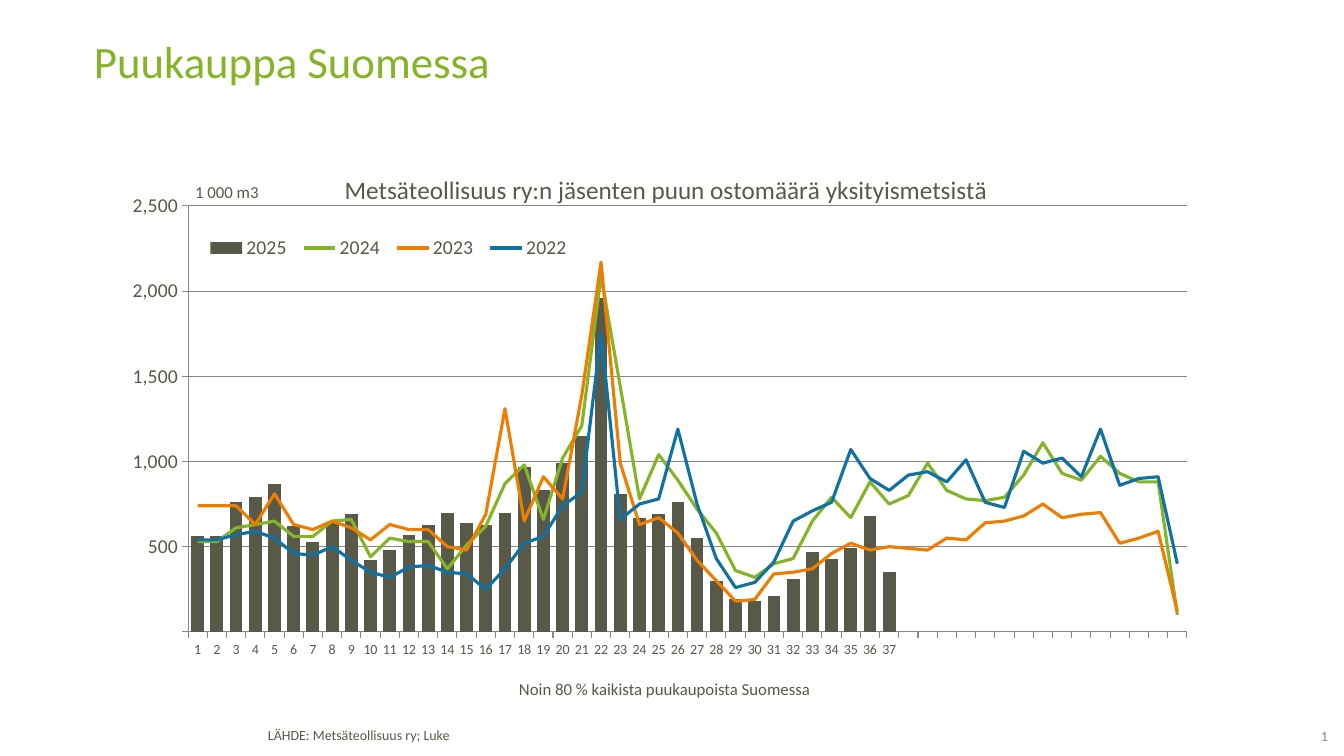
from dataclasses import dataclass

from lxml import etree
from pptx import Presentation, util as u
from pptx.chart.data import CategoryChartData
from pptx.dml.color import RGBColor
from pptx.enum import chart as ch, text
from pptx.oxml.ns import qn

PX = 914400 / 100.8
FONT = "Calibri"
GREEN = RGBColor(0x85, 0xB5, 0x26)
ORANGE = RGBColor(0xEF, 0x7D, 0x00)
BLUE = RGBColor(0x0F, 0x72, 0xA2)
DARK = RGBColor(0x59, 0x59, 0x4A)
GREY = RGBColor(0x87, 0x87, 0x87)
WEEKS = 52
WIDE, HIGH = 1178, 520


@dataclass
class Label:
    words: str
    left: int
    top: int
    width: int
    height: int
    size: int
    color: RGBColor = DARK
    space: float = 1.0
    align: text.PP_ALIGN = text.PP_ALIGN.LEFT
    inset: int = 10


@dataclass
class Year:
    name: str
    color: RGBColor
    loads: list[int]


LABELS = [
    Label("LÄHDE: Metsäteollisuus ry; Luke", 258, 724, 724, 27, 10, space=0.85),
    Label("1", 1275, 728, 53, 19, 10, GREY, align=text.PP_ALIGN.RIGHT, inset=0),
    Label("Puukauppa Suomessa", 84, 39, 1178, 99, 32, GREEN, space=0.8),
    Label("Noin 80 % kaikista puukaupoista Suomessa", 509, 674, 331, 31, 12),
]

YEARS = [
    Year("2025", DARK, [
        56, 56, 76, 79, 87, 62, 53, 64, 69, 42, 48, 57, 63, 70, 64, 63, 70, 97,
        83, 99, 115, 196, 81, 67, 69, 76, 55, 30, 19, 18, 21, 31, 47, 43, 49,
        68, 35]),
    Year("2024", GREEN, [
        53, 53, 61, 63, 65, 56, 56, 65, 66, 44, 55, 53, 53, 37, 51, 62, 87, 98,
        66, 102, 121, 209, 144, 78, 104, 89, 72, 58, 36, 32, 40, 43, 65, 79, 67,
        88, 75, 80, 99, 83, 78, 77, 79, 92, 111, 93, 89, 103, 93, 88, 88, 10]),
    Year("2023", ORANGE, [
        74, 74, 74, 63, 81, 63, 60, 65, 61, 54, 63, 60, 60, 50, 48, 69, 131, 65,
        91, 78, 139, 217, 99, 63, 67, 58, 42, 30, 18, 19, 34, 35, 37, 46, 52,
        48, 50, 49, 48, 55, 54, 64, 65, 68, 75, 67, 69, 70, 52, 55, 59, 12]),
    Year("2022", BLUE, [
        54, 54, 57, 59, 55, 46, 45, 50, 42, 35, 32, 38, 39, 35, 34, 25, 37, 52,
        56, 74, 82, 175, 66, 75, 78, 119, 75, 43, 26, 29, 41, 65, 71, 76, 107,
        90, 83, 92, 94, 88, 101, 76, 73, 106, 99, 102, 91, 119, 86, 90, 91, 40]),
]


def px(count: int) -> int:
    return round(count * PX)


def style(font, size: int, color: RGBColor = DARK) -> None:
    font.name, font.size, font.bold = FONT, u.Pt(size), False
    font.color.rgb = color


def write(slide, label: Label) -> None:
    box = slide.shapes.add_textbox(
        px(label.left), px(label.top), px(label.width), px(label.height))
    frame = box.text_frame
    frame.word_wrap = True
    frame.margin_left = frame.margin_right = px(label.inset)
    frame.margin_top = frame.margin_bottom = px(label.inset // 2)
    line = frame.paragraphs[0]
    line.text = label.words
    line.alignment, line.line_spacing = label.align, label.space
    style(line.font, label.size, label.color)


def add(parent, tag: str, val: str):
    return etree.SubElement(parent, qn(f"c:{tag}"), val=val)


def place(parent, index: int, inner: bool = False, **sides: int) -> None:
    for old in parent.findall(qn("c:layout")):
        parent.remove(old)
    layout = parent.makeelement(qn("c:layout"))
    parent.insert(index, layout)
    manual = etree.SubElement(layout, qn("c:manualLayout"))
    if inner:
        add(manual, "layoutTarget", "inner")
    for side in "xy":
        add(manual, f"{side}Mode", "edge")
    for side, count in sides.items():
        add(manual, side, str(count / (WIDE if side in "xw" else HIGH)))


def head(title, words: str, size: int, x: int, y: int) -> None:
    frame = title.text_frame
    frame.text = words
    style(frame.paragraphs[0].font, size)
    place(title._element, 1, x=x, y=y)


def split(chart) -> None:
    bar = chart.plots[0]._element
    line = bar.makeelement(qn("c:lineChart"))
    bar.addnext(line)
    add(line, "grouping", "standard")
    add(line, "varyColors", "0")
    for item in bar.findall(qn("c:ser"))[1:]:
        for flag in item.findall(qn("c:invertIfNegative")):
            item.remove(flag)
        line.append(item)
    add(line, "marker", "1")
    for axis in bar.findall(qn("c:axId")):
        add(line, "axId", axis.get("val"))


def draw(slide) -> None:
    data = CategoryChartData(number_format="General")
    last = len(YEARS[0].loads)
    data.categories = [str(n) if n <= last else "" for n in range(1, WEEKS + 1)]
    for year in YEARS:
        loads = [load * 10000 for load in year.loads]
        data.add_series(year.name, loads + [None] * (WEEKS - len(loads)))
    chart = slide.shapes.add_chart(
        ch.XL_CHART_TYPE.COLUMN_CLUSTERED, px(84), px(158), px(WIDE), px(HIGH),
        data).chart
    style(chart.font, 10)
    split(chart)

    bars, lines = chart.plots
    bars.gap_width, bars.vary_by_categories = 50, False
    fill = bars.series[0].format.fill
    fill.solid()
    fill.fore_color.rgb = YEARS[0].color
    for item, year in zip(lines.series, YEARS[1:]):
        item.smooth = False
        item.marker.style = ch.XL_MARKER_STYLE.NONE
        item.format.line.width = u.Pt(2.25)
        item.format.line.color.rgb = year.color

    value, week = chart.value_axis, chart.category_axis
    value.minimum_scale, value.maximum_scale = 0, 2500000
    value.major_unit = 500000
    value.has_major_gridlines = True
    value.tick_labels.number_format = "#,###,"
    value.tick_labels.number_format_is_linked = False
    style(value.tick_labels.font, 14)
    style(week.tick_labels.font, 10)
    for part in (value, week, value.major_gridlines):
        part.format.line.color.rgb = GREY
        part.format.line.width = u.Pt(0.75)
    for axis in (value, week):
        axis.major_tick_mark = ch.XL_TICK_MARK.OUTSIDE

    head(value.axis_title, "1 000 m3", 12, 108, 20)
    value.axis_title.text_frame._txBody.bodyPr.set("rot", "0")
    chart.has_title = True
    head(chart.chart_title,
         "Metsäteollisuus ry:n jäsenten puun ostomäärä yksityismetsistä",
         18, 256, 10)
    chart.chart_title._element.find(qn("c:overlay")).set("val", "1")

    chart.has_legend = True
    legend = chart.legend
    legend.position = ch.XL_LEGEND_POSITION.RIGHT
    legend.include_in_layout = False
    style(legend.font, 14)
    place(legend._element, 1, x=116, y=72, w=377, h=36)
    place(bars._element.getparent(), 0, True, x=104, y=48, w=999, h=426)


def main() -> None:
    """Build the wood trade slide."""
    deck = Presentation()
    deck.slide_width, deck.slide_height = px(1344), px(756)
    slide = deck.slides.add_slide(deck.slide_layouts[6])
    draw(slide)
    for label in LABELS:
        write(slide, label)
    deck.save("out.pptx")


if __name__ == "__main__":
    main()
